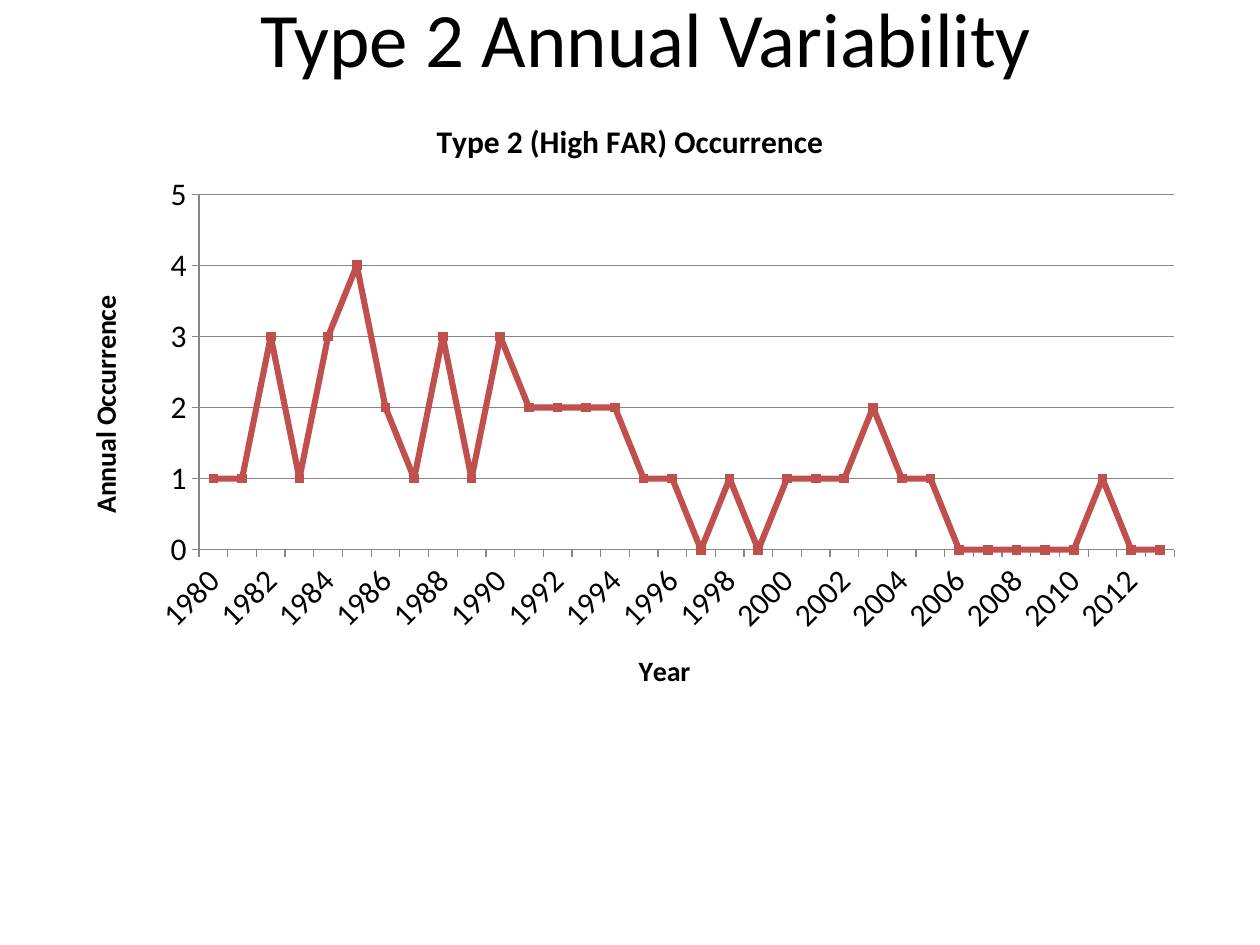
import pptx
import pptx.chart.data
import pptx.dml.color
import pptx.enum.chart
import pptx.enum.text
import pptx.oxml
import pptx.oxml.ns
import pptx.util
from pptx.util import Inches, Pt

TITLE = "Type 2 Annual Variability"
CHART_TITLE = "Type 2 (High FAR) Occurrence"
AXIS_TITLES = {"category": "Year", "value": "Annual Occurrence"}
FIRST_YEAR = 1980
OCCURRENCES = [
    1, 1, 3, 1, 3, 4, 2, 1, 3, 1,
    3, 2, 2, 2, 2, 1, 1, 0, 1, 0,
    1, 1, 1, 2, 1, 1, 0, 0, 0, 0,
    0, 1, 0, 0,
]
COLORS = {"text": "000000", "series": "C0504D", "axis": "868686"}
FONT = "Calibri"
TITLE_BOX = (1.17, -0.33, 7.92, 1.25)
CHART_BOX = (0.5, 0.75, 9, 4.95)
PLOT_FRACTIONS = {"x": 0.12, "y": 0.16, "w": 0.86, "h": 0.57}
VALUE_SCALE = {"minimum_scale": 0, "maximum_scale": 5, "major_unit": 1,
               "has_major_gridlines": True}


def color(name):
    return pptx.dml.color.RGBColor.from_string(COLORS[name])


def format_font(font, size, bold=False):
    for name, value in {"name": FONT, "size": Pt(size), "bold": bold}.items():
        setattr(font, name, value)
    font.color.rgb = color("text")


def format_line(line, color_name, width):
    line.color.rgb = color(color_name)
    line.width = Pt(width)


def write_heading(owner, text, size):
    """Give a chart or an axis a bold title."""
    owner.has_title = True
    frame = (owner.chart_title if hasattr(owner, "chart_title") else owner.axis_title).text_frame
    frame.text = text
    format_font(frame.paragraphs[0].runs[0].font, size, bold=True)


def format_axis(axis, title):
    write_heading(axis, title, 16)
    format_font(axis.tick_labels.font, 18)
    format_line(axis.format.line, "axis", 0.75)
    axis.major_tick_mark = pptx.enum.chart.XL_TICK_MARK.OUTSIDE


def place_plot(chart):
    """Fix the inner plot area as fractions of the chart."""
    places = "".join(f'<c:{key}Mode val="edge"/>' for key in "xy")
    places += "".join(f'<c:{key} val="{value}"/>' for key, value in PLOT_FRACTIONS.items())
    layout = pptx.oxml.parse_xml(
        f'<c:layout {pptx.oxml.ns.nsdecls("c")}><c:manualLayout>'
        f'<c:layoutTarget val="inner"/>{places}</c:manualLayout></c:layout>')
    plot_area = chart.element.find(".//" + pptx.oxml.ns.qn("c:plotArea"))
    for previous in plot_area.findall(pptx.oxml.ns.qn("c:layout")):
        plot_area.remove(previous)
    plot_area.insert(0, layout)


def slant_and_thin_labels(axis):
    """Turn the year labels by 45 degrees and show every second one."""
    body = axis.tick_labels.font._element.getparent().getparent().getparent().find(
        pptx.oxml.ns.qn("a:bodyPr"))
    body.set("rot", "-2700000")
    body.set("vert", "horz")
    skip = pptx.oxml.parse_xml(
        f'<c:tickLblSkip {pptx.oxml.ns.nsdecls("c")} val="2"/>')
    axis._element.find(pptx.oxml.ns.qn("c:noMultiLvlLbl")).addprevious(skip)


def add_title(slide):
    title = slide.shapes.title
    title.left, title.top, title.width, title.height = map(Inches, TITLE_BOX)
    frame = title.text_frame
    frame.text = TITLE
    frame.vertical_anchor = pptx.enum.text.MSO_ANCHOR.MIDDLE
    frame.paragraphs[0].alignment = pptx.enum.text.PP_ALIGN.CENTER
    format_font(frame.paragraphs[0].runs[0].font, 44)


def add_occurrence_chart(slide):
    data = pptx.chart.data.CategoryChartData(number_format="General")
    data.categories = range(FIRST_YEAR, FIRST_YEAR + len(OCCURRENCES))
    data.add_series("Series 1", OCCURRENCES)
    chart = slide.shapes.add_chart(
        pptx.enum.chart.XL_CHART_TYPE.LINE_MARKERS, *map(Inches, CHART_BOX), data).chart
    format_font(chart.font, 10)
    chart.has_legend = False
    write_heading(chart, CHART_TITLE, 18)
    chart.chart_title.include_in_layout = False
    chart.plots[0].vary_by_categories = False

    format_axis(chart.category_axis, AXIS_TITLES["category"])
    format_axis(chart.value_axis, AXIS_TITLES["value"])
    for name, value in VALUE_SCALE.items():
        setattr(chart.value_axis, name, value)
    format_line(chart.value_axis.major_gridlines.format.line, "axis", 0.75)
    slant_and_thin_labels(chart.category_axis)
    place_plot(chart)

    series = chart.plots[0].series[0]
    series.smooth = False
    format_line(series.format.line, "series", 3.5)
    series.marker.style = pptx.enum.chart.XL_MARKER_STYLE.SQUARE
    series.marker.size = 5
    series.marker.format.fill.solid()
    series.marker.format.fill.fore_color.rgb = color("series")
    format_line(series.marker.format.line, "series", 0.75)


def main():
    presentation = pptx.Presentation()
    presentation.slide_width, presentation.slide_height = Inches(10), Inches(7.5)
    slide = presentation.slides.add_slide(presentation.slide_layouts.get_by_name("Title Only"))
    add_title(slide)
    add_occurrence_chart(slide)
    presentation.save("out.pptx")


if __name__ == "__main__":
    main()
